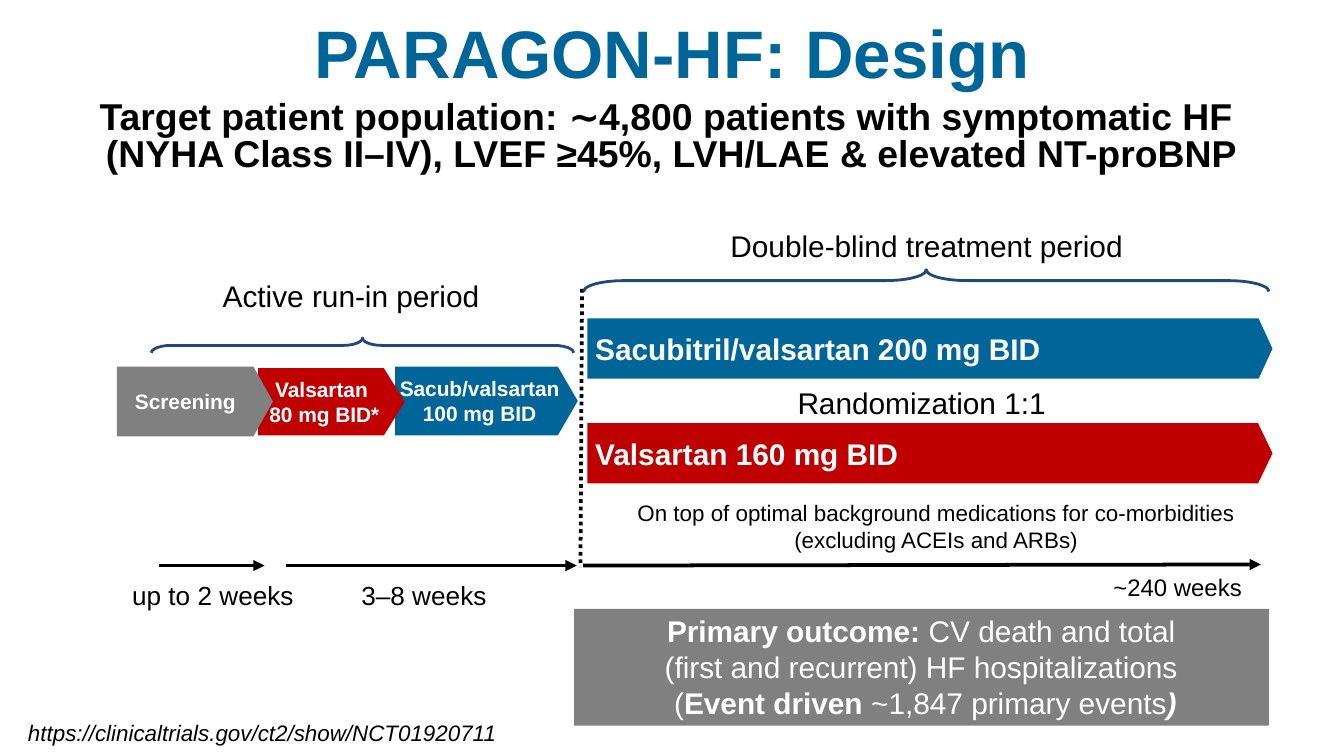
from lxml.etree import SubElement
from pptx import Presentation
from pptx.dml.color import RGBColor
from pptx.enum.dml import MSO_LINE
from pptx.enum.shapes import MSO_CONNECTOR, MSO_SHAPE
from pptx.enum.text import MSO_ANCHOR, MSO_AUTO_SIZE, PP_ALIGN
from pptx.oxml.ns import qn
from pptx.util import Cm, Pt

COLORS = {
    "blue": "006699",
    "red": "C00000",
    "gray": "808080",
    "navy": "1F497D",
    "black": "000000",
    "white": "FFFFFF",
}
NO_INSETS = (0, 0, 0, 0)
NOTE_INSETS = (0.3, 0.08, 0.15, 0.08)


def rgb(name):
    """Return the named palette colour."""
    return RGBColor.from_string(COLORS[name])


def style_paragraph(paragraph, size, color, align=PP_ALIGN.LEFT, bold=False, italic=False):
    """Set the alignment and font of a paragraph."""
    paragraph.alignment = align
    font = paragraph.font
    font.name, font.size = "Arial", Pt(size)
    font.bold, font.italic = bold, italic
    font.color.rgb = rgb(color)


def set_insets(frame, insets):
    """Set left, top, right and bottom text margins in centimetres."""
    frame.margin_left, frame.margin_top, frame.margin_right, frame.margin_bottom = map(Cm, insets)


def write_lines(frame, lines, size, color, **style):
    """Write each line as a paragraph and return the paragraphs."""
    frame.text = "\n".join(lines)
    for paragraph in frame.paragraphs:
        style_paragraph(paragraph, size, color, **style)
    return frame.paragraphs


def add_label(slide, box, lines, size, insets=None, wrap=True, **style):
    """Add a black text label and return its paragraphs."""
    frame = slide.shapes.add_textbox(*map(Cm, box)).text_frame
    frame.word_wrap = wrap
    frame.auto_size = MSO_AUTO_SIZE.SHAPE_TO_FIT_TEXT
    if insets:
        set_insets(frame, insets)
    return write_lines(frame, lines, size, "black", **style)


def add_block(slide, kind, box, fill):
    """Add a plain filled shape without outline or shadow."""
    block = slide.shapes.add_shape(kind, *map(Cm, box))
    block.shadow.inherit = False
    block.fill.solid()
    block.fill.fore_color.rgb = rgb(fill)
    block.line.fill.background()
    return block


def add_phase(slide, box, tip, fill, lines, size, align, left_inset):
    """Add a pentagon for one phase or treatment arm."""
    phase = add_block(slide, MSO_SHAPE.PENTAGON, box, fill)
    phase.adjustments[0] = tip
    frame = phase.text_frame
    frame.word_wrap = False
    frame.vertical_anchor = MSO_ANCHOR.MIDDLE
    set_insets(frame, (left_inset, 0, 0.15, 0))
    return write_lines(frame, lines, size, "white", align=align, bold=True)


def add_brace(slide, box, curl):
    """Add a left brace turned to open downwards."""
    brace = slide.shapes.add_shape(MSO_SHAPE.LEFT_BRACE, *map(Cm, box))
    brace.rotation = 90
    brace.adjustments[0] = curl
    brace.shadow.inherit = False
    brace.fill.background()
    brace.line.color.rgb = rgb("navy")
    brace.line.width = Pt(1.5)


def add_line(slide, start, end, arrow=True):
    """Add a timeline arrow, or a dotted divider when arrow is false."""
    line = slide.shapes.add_connector(MSO_CONNECTOR.STRAIGHT, *map(Cm, start + end))
    line.line.color.rgb = rgb("black")
    line.line.width = Pt(2)
    if arrow:
        SubElement(line.line._get_or_add_ln(), qn("a:tailEnd"), type="triangle")
    else:
        line.line.dash_style = MSO_LINE.ROUND_DOT
    SubElement(line._element.spPr, qn("a:effectLst"))


def add_title(slide, text):
    """Place and format the title placeholder."""
    title = slide.shapes.title
    title.left, title.top, title.width, title.height = map(Cm, (0, 0.05, 25.4, 1.85))
    title.text_frame.auto_size = MSO_AUTO_SIZE.NONE
    title.text_frame.vertical_anchor = MSO_ANCHOR.MIDDLE
    write_lines(title.text_frame, [text], 36, "blue", align=PP_ALIGN.CENTER, bold=True)


def add_outcome(slide):
    """Add the primary outcome panel with its bold phrases."""
    panel = add_block(slide, MSO_SHAPE.RECTANGLE, (10.85, 11.51, 13.13, 2.21), "gray")
    frame = panel.text_frame
    frame.word_wrap = True
    frame.auto_size = MSO_AUTO_SIZE.SHAPE_TO_FIT_TEXT
    frame.vertical_anchor = MSO_ANCHOR.TOP
    set_insets(frame, NOTE_INSETS)
    lines = [
        [("Primary outcome: ", True, False), ("CV death and total ", False, False)],
        [("(first and recurrent) HF hospitalizations ", False, False)],
        [("(", False, False), ("Event driven ", True, False),
         ("~1,847 primary events", False, False), (")", True, True)],
    ]
    for index, line in enumerate(lines):
        paragraph = frame.add_paragraph() if index else frame.paragraphs[0]
        style_paragraph(paragraph, 16, "white", PP_ALIGN.CENTER)
        for text, bold, italic in line:
            run = paragraph.add_run()
            run.text = text
            run.font.bold, run.font.italic = bold, italic


def main():
    """Build the trial design slide."""
    deck = Presentation()
    deck.slide_width, deck.slide_height = Cm(25.4), Cm(14.29)
    slide = deck.slides.add_slide(deck.slide_layouts[5])
    center = PP_ALIGN.CENTER

    add_title(slide, "PARAGON-HF: Design")
    population = add_label(
        slide, (0, 1.8, 25.4, 1.7),
        ["Target patient population: ∼4,800 patients with symptomatic HF ",
         "(NYHA Class II–IV), LVEF ≥45%, LVH/LAE & elevated NT-proBNP"],
        20, align=center, bold=True)
    for paragraph in population:
        paragraph.line_spacing = Pt(19.5)

    add_label(slide, (2.36, 10.95, 3.2, 0.61), [" up to 2 weeks"], 14, NO_INSETS, wrap=False)
    add_label(slide, (6.83, 10.95, 2.39, 0.61), ["3–8 weeks"], 14, NO_INSETS, wrap=False)
    add_label(slide, (11.18, 10.82, 12.29, 0.56), ["~240 weeks"], 12.8, NO_INSETS,
              align=PP_ALIGN.RIGHT)

    add_line(slide, (11, 5.46), (10.97, 10.72), arrow=False)
    for start, end in (((11.02, 10.69), (23.83, 10.67)),
                       ((5.41, 10.69), (10.9, 10.69)),
                       ((3, 10.69), (5, 10.69))):
        add_line(slide, start, end)

    for top, tip, fill, arm in ((8, 0.24, "red", "Valsartan 160 mg BID"),
                                (6.02, 0.23, "blue", "Sacubitril/valsartan 200 mg BID")):
        add_phase(slide, (11.1, top, 12.95, 1.14), tip, fill, [arm], 16, PP_ALIGN.LEFT, 0.15)

    run_in = (
        ((7.47, 6.93, 3.45, 1.3), 0.29, "blue", ["Sacub/valsartan", "100 mg BID"]),
        ((4.88, 6.96, 2.77, 1.27), 0.31, "red", ["Valsartan ", "80 mg BID*"]),
        ((2.21, 6.93, 2.95, 1.32), 0.28, "gray", ["Screening "]),
    )
    for box, tip, fill, lines in run_in:
        add_phase(slide, box, tip, fill, lines, 11.2, center, 0.08)

    add_label(slide, (10.85, 9.35, 13.54, 1.17),
              ["On top of optimal background medications for co-morbidities "
               "(excluding ACEIs and ARBs)"], 12, NOTE_INSETS, align=center)
    add_outcome(slide)

    add_brace(slide, (6.71, 2.54, 0.28, 7.98), 1.32)
    add_brace(slide, (17.3, -1.17, 0.41, 12.95), 1.89)
    add_label(slide, (3.96, 5.13, 6.78, 0.94), ["Active run-in period"], 16)
    add_label(slide, (12.88, 4.17, 9.27, 0.94), ["Double-blind treatment period"], 16, align=center)
    add_label(slide, (13.84, 7.14, 7.16, 0.94), ["Randomization 1:1"], 16, align=center)
    add_label(slide, (0.28, 13.46, 9.42, 0.76),
              ["https://clinicaltrials.gov/ct2/show/NCT01920711"], 12, wrap=False, italic=True)

    deck.save("out.pptx")


if __name__ == "__main__":
    main()
